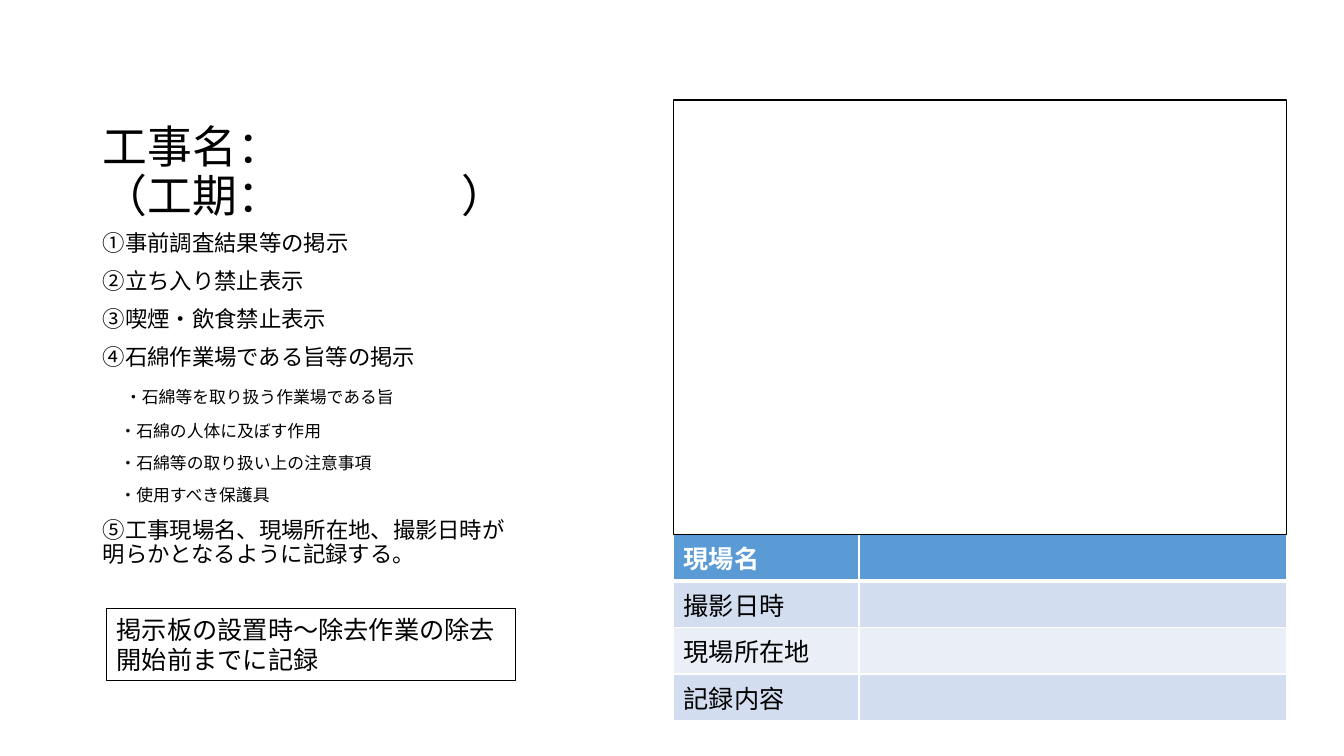
from lxml import etree
from pptx import Presentation
from pptx.dml.color import RGBColor
from pptx.enum import shapes, text
from pptx.oxml import ns
from pptx.util import Inches, Pt

FONT = "Noto Sans CJK JP"
BLACK = RGBColor(0x00, 0x00, 0x00)
WHITE = RGBColor(0xFF, 0xFF, 0xFF)
HEADER_BLUE = RGBColor(0x5B, 0x9B, 0xD5)
BAND_DARK = RGBColor(0xD2, 0xDE, 0xEF)
BAND_LIGHT = RGBColor(0xEA, 0xEF, 0xF7)

TITLE_LINES = ["工事名：", "（工期：　　　　）"]
CHECKLIST = [
    [("①事前調査結果等の掲示", 16)],
    [("②立ち入り禁止表示", 16)],
    [("③喫煙・飲食禁止表示", 16)],
    [("④石綿作業場である旨等の掲示", 16)],
    [("　", 16), ("・石綿等を取り扱う作業場である旨", 12)],
    [("　・石綿の人体に及ぼす作用", 12)],
    [("　・石綿等の取り扱い上の注意事項", 12)],
    [("　・使用すべき保護具", 12)],
    [("⑤工事現場名、現場所在地、撮影日時が明らかとなるように記録する。", 16)],
]
NOTE = "掲示板の設置時～除去作業の除去開始前までに記録"
RECORD_LABELS = ["現場名", "撮影日時", "現場所在地", "記録内容"]


def add_run(paragraph, words, size, color=BLACK, bold=False):
    run = paragraph.add_run()
    run.text = words
    run.font.size = Pt(size)
    run.font.bold = bold
    run.font.color.rgb = color
    run.font.name = FONT
    east_asian = etree.SubElement(run._r.get_or_add_rPr(), ns.qn("a:ea"))
    east_asian.set("typeface", FONT)


def place(shape, left, top, width, height):
    shape.left, shape.top = Inches(left), Inches(top)
    shape.width, shape.height = Inches(width), Inches(height)


def fill_title(title):
    place(title, 0.92, 0.5, 4.3, 1.75)
    frame = title.text_frame
    frame.auto_size = text.MSO_AUTO_SIZE.NONE
    frame.vertical_anchor = text.MSO_ANCHOR.BOTTOM
    heading = frame.paragraphs[0]
    heading.alignment = text.PP_ALIGN.LEFT
    heading.line_spacing = 0.9
    for index, line in enumerate(TITLE_LINES):
        if index:
            heading.add_line_break()
        add_run(heading, line, 32)


def fill_checklist(body):
    place(body, 0.92, 2.25, 4.3, 4.17)
    frame = body.text_frame
    frame.auto_size = text.MSO_AUTO_SIZE.NONE
    for index, parts in enumerate(CHECKLIST):
        item = frame.add_paragraph() if index else frame.paragraphs[0]
        item.line_spacing = 0.9
        item.space_before = Pt(10)
        for words, size in parts:
            add_run(item, words, size)


def set_borders(cell, bottom_width):
    """Draw white lines on all four sides, ahead of the fill in the XML."""
    properties = cell._tc.get_or_add_tcPr()
    widths = {"lnL": 1, "lnR": 1, "lnT": 1, "lnB": bottom_width}
    for index, (side, width) in enumerate(widths.items()):
        border = etree.Element(ns.qn(f"a:{side}"), w=str(Pt(width)))
        paint = etree.SubElement(border, ns.qn("a:solidFill"))
        etree.SubElement(paint, ns.qn("a:srgbClr"), val=str(WHITE))
        properties.insert(index, border)


def add_record_table(slide):
    table = slide.shapes.add_table(
        len(RECORD_LABELS), 2,
        Inches(6.68), Inches(5.3), Inches(6.08), Inches(1.6)).table
    for column, width in zip(table.columns, (1.84, 4.24)):
        column.width = Inches(width)
    for index, label in enumerate(RECORD_LABELS):
        header = index == 0
        band = BAND_DARK if index % 2 else BAND_LIGHT
        for cell in table.rows[index].cells:
            cell.fill.solid()
            cell.fill.fore_color.rgb = HEADER_BLUE if header else band
            set_borders(cell, 3 if header else 1)
        add_run(table.cell(index, 0).text_frame.paragraphs[0], label, 18,
                WHITE if header else BLACK, header)


def add_outlined_box(slide, left, top, width, height, line_width):
    box = slide.shapes.add_shape(
        shapes.MSO_SHAPE.RECTANGLE,
        Inches(left), Inches(top), Inches(width), Inches(height))
    box.shadow.inherit = False
    box.fill.background()
    box.line.color.rgb = BLACK
    box.line.width = Pt(line_width)
    return box


def add_note(slide):
    frame = add_outlined_box(slide, 1.06, 6.04, 4.05, 0.71, 0.75).text_frame
    frame.word_wrap = True
    frame.auto_size = text.MSO_AUTO_SIZE.SHAPE_TO_FIT_TEXT
    frame.vertical_anchor = text.MSO_ANCHOR.TOP
    frame.paragraphs[0].alignment = text.PP_ALIGN.LEFT
    add_run(frame.paragraphs[0], NOTE, 18)


def main():
    deck = Presentation()
    deck.slide_width, deck.slide_height = Inches(13.33), Inches(7.5)
    slide = deck.slides.add_slide(
        deck.slide_layouts.get_by_name("Content with Caption"))
    title, content, caption = slide.placeholders
    content.element.getparent().remove(content.element)

    fill_title(title)
    add_record_table(slide)
    fill_checklist(caption)
    add_outlined_box(slide, 6.68, 0.99, 6.08, 4.31, 1)
    add_note(slide)
    deck.save("out.pptx")


if __name__ == "__main__":
    main()
